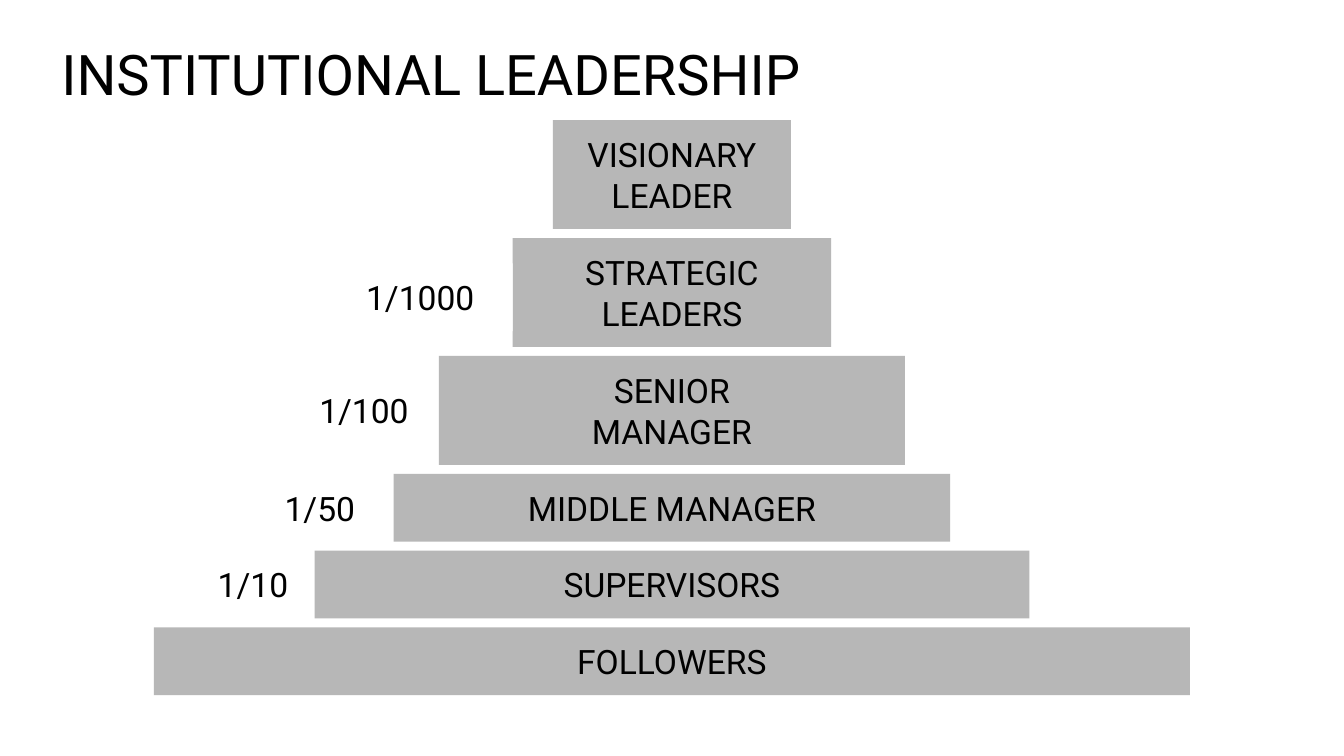
"""Build the institutional leadership pyramid slide."""
from pptx import Presentation
from pptx import util as u
from pptx.dml.color import RGBColor
from pptx.enum import shapes, text

TITLE = "INSTITUTIONAL LEADERSHIP"
LEVELS = [
    {"names": ["VISIONARY", "LEADER"], "width": 4.5},
    {"names": ["STRATEGIC", "LEADERS"], "width": 6.02,
     "ratio": "1/1000", "ratio_width": 3.02, "drop": 0.09, "ratio_fill": "white"},
    {"names": ["SENIOR", "MANAGER"], "width": 8.81, "ratio": "1/100", "ratio_width": 2.51},
    {"names": ["MIDDLE MANAGER"], "width": 10.52, "ratio": "1/50", "ratio_width": 2.31},
    {"names": ["SUPERVISORS"], "width": 13.51, "ratio": "1/10", "ratio_width": 2.08},
    {"names": ["FOLLOWERS"], "width": 19.58},
]
COLORS = {"bar": "B7B7B7", "ink": "000000", "white": "FFFFFF"}
SLIDE_WIDTH, SLIDE_HEIGHT = 25.4, 14.29
FIRST_TOP, GAP = 2.27, 0.17
ROW_HEIGHTS = {1: 1.28, 2: 2.06}
INSET = u.Cm(0.25)
FRAME = {
    "word_wrap": True,
    "auto_size": text.MSO_AUTO_SIZE.SHAPE_TO_FIT_TEXT,
    "vertical_anchor": text.MSO_ANCHOR.MIDDLE,
    "margin_left": INSET,
    "margin_top": INSET,
    "margin_right": INSET,
    "margin_bottom": INSET,
}


def color(name):
    """Return the named palette colour."""
    return RGBColor.from_string(COLORS[name])


def apply(target, values):
    """Set each attribute from a dict of format values."""
    for name, value in values.items():
        setattr(target, name, value)


def write(shape, lines, size, align):
    """Put formatted lines of text into a shape."""
    frame = shape.text_frame
    frame.text = "\n".join(lines)
    apply(frame, FRAME)
    for line in frame.paragraphs:
        line.alignment = align
        apply(line.runs[0].font, {"name": "Roboto", "size": u.Pt(size)})
        line.runs[0].font.color.rgb = color("ink")


def add_box(slide, place, fill=None):
    """Add a plain rectangle, or a text box when there is no fill."""
    lengths = [u.Cm(length) for length in place]
    if fill is None:
        return slide.shapes.add_textbox(*lengths)
    box = slide.shapes.add_shape(shapes.MSO_SHAPE.RECTANGLE, *lengths)
    box.shadow.inherit = False
    box.fill.solid()
    box.fill.fore_color.rgb = color(fill)
    box.line.fill.background()
    return box


def add_level(slide, level, top):
    """Draw one pyramid level with its ratio and return the next top."""
    height = ROW_HEIGHTS[len(level["names"])]
    left = (SLIDE_WIDTH - level["width"]) / 2
    bar = add_box(slide, (left, top, level["width"], height), "bar")
    write(bar, level["names"], 18, text.PP_ALIGN.CENTER)
    if "ratio" in level:
        width, ratio_height = level["ratio_width"], ROW_HEIGHTS[1]
        ratio_top = top + (height - ratio_height) / 2 + level.get("drop", 0)
        place = (left - width, ratio_top, width, ratio_height)
        ratio = add_box(slide, place, level.get("ratio_fill"))
        write(ratio, [level["ratio"]], 18, text.PP_ALIGN.LEFT)
    return top + height + GAP


def main():
    """Build and save the slide."""
    deck = Presentation()
    apply(deck, {"slide_width": u.Cm(SLIDE_WIDTH), "slide_height": u.Cm(SLIDE_HEIGHT)})
    slide = deck.slides.add_slide(deck.slide_layouts[5])
    title = slide.shapes.title
    apply(title, {"left": u.Cm(0.91), "top": u.Cm(0.48),
                  "width": u.Cm(22.07), "height": u.Cm(1.8)})
    write(title, [TITLE], 30, text.PP_ALIGN.LEFT)
    top = FIRST_TOP
    for level in LEVELS:
        top = add_level(slide, level, top)
    deck.save("out.pptx")


if __name__ == "__main__":
    main()
